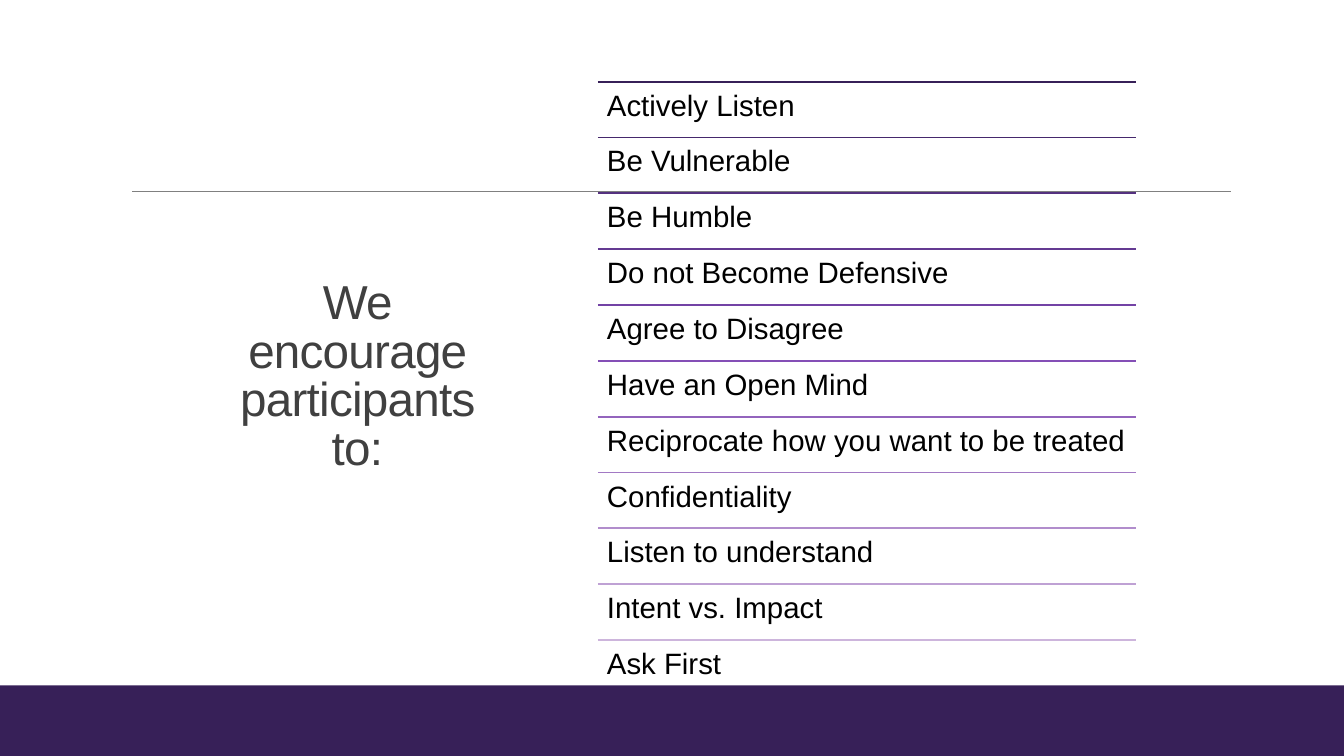
from lxml import etree
from pptx import Presentation
from pptx.dml.color import RGBColor
from pptx.enum.shapes import MSO_CONNECTOR, MSO_SHAPE
from pptx.enum.text import MSO_ANCHOR, PP_ALIGN
from pptx.oxml.ns import qn
from pptx.util import Inches, Pt

STRAIGHT = MSO_CONNECTOR.STRAIGHT
RECTANGLE = MSO_SHAPE.RECTANGLE
TOP, MIDDLE = MSO_ANCHOR.TOP, MSO_ANCHOR.MIDDLE
LEFT, CENTER = PP_ALIGN.LEFT, PP_ALIGN.CENTER

GUIDELINES = [
    ("Actively Listen", "372058"),
    ("Be Vulnerable", "45286C"),
    ("Be Humble", "54317F"),
    ("Do not Become Defensive", "643A92"),
    ("Agree to Disagree", "7343A5"),
    ("Have an Open Mind", "844FB6"),
    ("Reciprocate how you want to be treated", "9364BD"),
    ("Confidentiality", "A279C4"),
    ("Listen to understand", "B18DCC"),
    ("Intent vs. Impact", "BFA1D4"),
    ("Ask First", "CDB5DC"),
]
LIST_LEFT, LIST_WIDTH = 5.93, 5.34
FIRST_TOP, LAST_TOP = 0.81, 6.35
ROW_HEIGHT = (LAST_TOP - FIRST_TOP) / (len(GUIDELINES) - 1)


def color(value):
    return RGBColor.from_string(value)


class SlideBuilder:
    font = "Arial"

    def __init__(self, slide):
        self.shapes = slide.shapes

    def band(self, left, top, width, height, fill):
        box = self.shapes.add_shape(RECTANGLE, Inches(left), Inches(top),
                                    Inches(width), Inches(height))
        box.shadow.inherit = False
        box.fill.solid()
        box.fill.fore_color.rgb = color(fill)
        box.line.fill.background()

    def rule(self, left, top, width, stroke, weight):
        """Draw a horizontal line."""
        line = self.shapes.add_connector(STRAIGHT, Inches(left), Inches(top),
                                         Inches(left + width), Inches(top))
        line.line.color.rgb = color(stroke)
        line.line.width = Pt(weight)
        etree.SubElement(line._element.spPr, qn("a:effectLst"))

    def text(self, left, top, width, height, words, size, ink, spacing,
             align=LEFT, anchor=TOP, insets=(0.1, 0.05), tracking=0):
        """Add a text box; insets are horizontal and vertical, tracking is in points."""
        box = self.shapes.add_textbox(Inches(left), Inches(top), Inches(width), Inches(height))
        frame = box.text_frame
        frame.word_wrap = True
        frame.vertical_anchor = anchor
        frame.margin_left = frame.margin_right = Inches(insets[0])
        frame.margin_top = frame.margin_bottom = Inches(insets[1])
        frame.text = words
        para = frame.paragraphs[0]
        para.alignment = align
        para.line_spacing = spacing
        span = para.runs[0]
        span.font.name = self.font
        span.font.size = Pt(size)
        span.font.color.rgb = color(ink)
        if tracking:
            span.font._element.set("spc", str(round(tracking * 100)))


def main():
    deck = Presentation()
    deck.slide_width, deck.slide_height = Inches(13.33), Inches(7.5)
    page = SlideBuilder(deck.slides.add_slide(deck.slide_layouts[6]))

    page.band(0, 6.8, 13.33, 0.7, "372058")
    page.rule(1.31, 1.9, 10.9, "808080", 0.5)
    page.text(2.19, 0.7, 2.71, 6.1, "We encourage participants to:", 34, "404040", 0.85,
              align=CENTER, anchor=MIDDLE, tracking=-0.5)

    for row, (guideline, stroke) in enumerate(GUIDELINES):
        top = FIRST_TOP + row * ROW_HEIGHT
        page.rule(LIST_LEFT, top, LIST_WIDTH, stroke, 1.25)
        page.text(LIST_LEFT, top, LIST_WIDTH, ROW_HEIGHT, guideline, 21, "000000", 0.9,
                  insets=(0.09, 0.09))

    deck.save("out.pptx")


if __name__ == "__main__":
    main()
